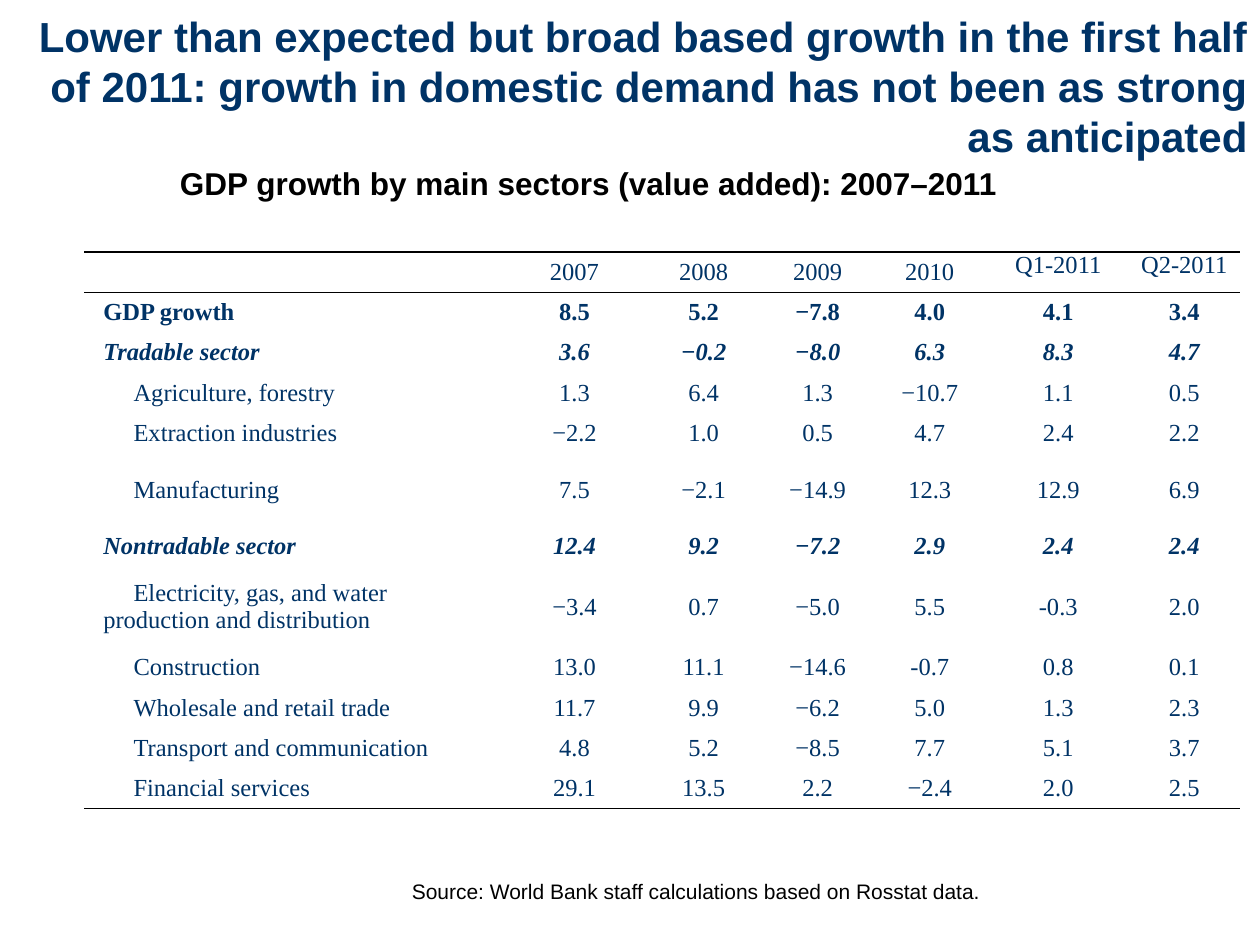
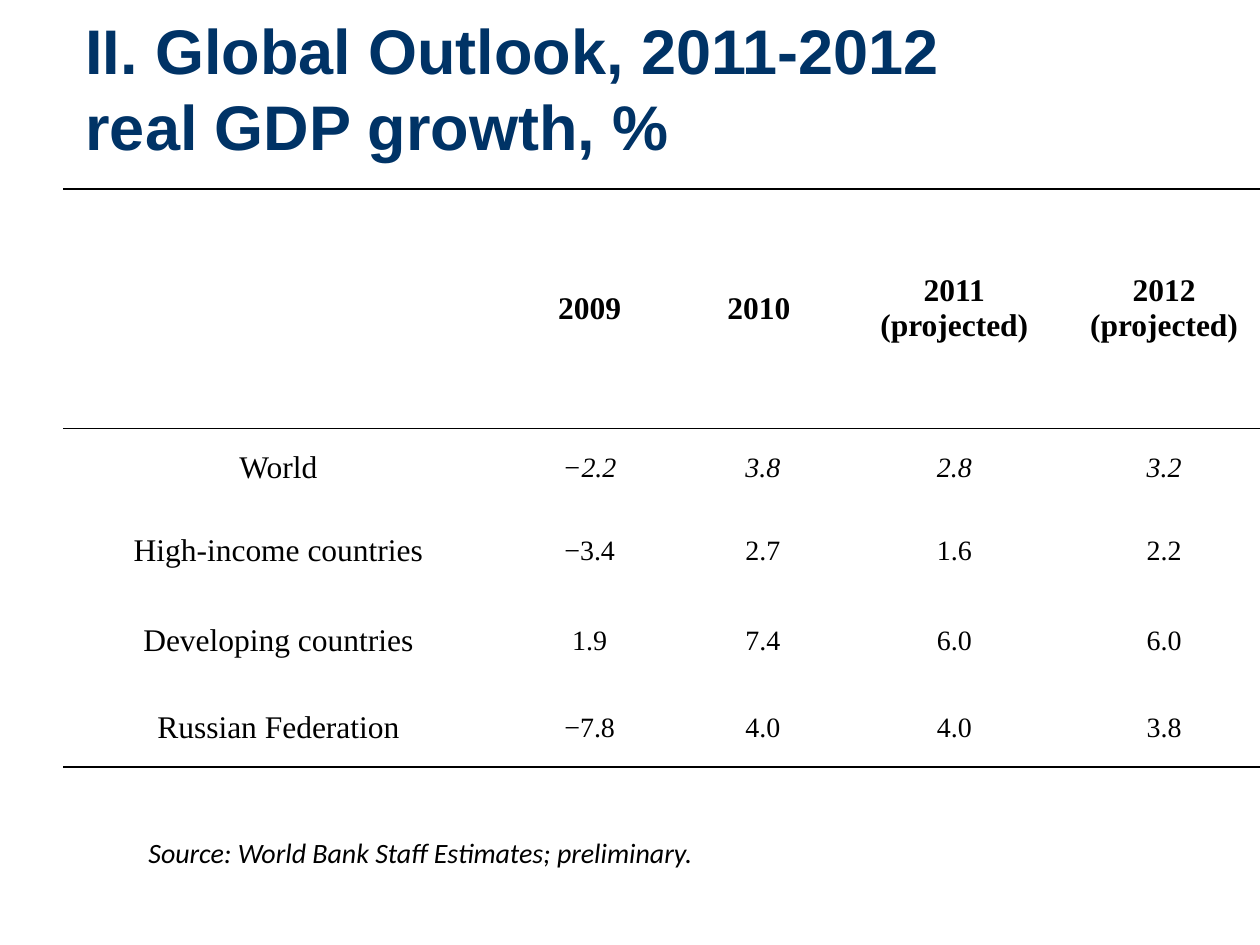
from dataclasses import dataclass

from lxml import etree
from pptx import Presentation
from pptx.dml.color import RGBColor
from pptx.enum.text import MSO_ANCHOR, MSO_AUTO_SIZE, PP_ALIGN
from pptx.oxml.ns import qn
from pptx.util import Inches, Pt

LEFT, CENTER, RIGHT, JUSTIFY = PP_ALIGN.LEFT, PP_ALIGN.CENTER, PP_ALIGN.RIGHT, PP_ALIGN.JUSTIFY
TOP, MIDDLE, BOTTOM = MSO_ANCHOR.TOP, MSO_ANCHOR.MIDDLE, MSO_ANCHOR.BOTTOM
GROW, FIXED = MSO_AUTO_SIZE.SHAPE_TO_FIT_TEXT, MSO_AUTO_SIZE.NONE


@dataclass(frozen=True)
class Theme:
    navy: str = "003366"
    black: str = "000000"
    sans: str = "Arial"
    serif: str = "Times New Roman"
    note: str = "Calibri"
    long_title: int = 24
    title: int = 36
    heading: int = 18
    source: int = 12
    note_size: int = 16
    sector_size: int = 14
    outlook_label: int = 18
    outlook_value: int = 16


THEME = Theme()

SECTOR_YEARS = ["2007", "2008", "2009", "2010", "Q1-2011", "Q2-2011"]
SECTOR_ROWS = [
    ("total", "GDP growth", "8.5 5.2 −7.8 4.0 4.1 3.4"),
    ("sector", "Tradable sector", "3.6 −0.2 −8.0 6.3 8.3 4.7"),
    ("item", "Agriculture, forestry", "1.3 6.4 1.3 −10.7 1.1 0.5"),
    ("item", "Extraction industries", "−2.2 1.0 0.5 4.7 2.4 2.2"),
    ("item", "Manufacturing", "7.5 −2.1 −14.9 12.3 12.9 6.9"),
    ("sector", "Nontradable sector", "12.4 9.2 −7.2 2.9 2.4 2.4"),
    ("item", "Electricity, gas, and water production and distribution",
     "−3.4 0.7 −5.0 5.5 -0.3 2.0"),
    ("item", "Construction", "13.0 11.1 −14.6 -0.7 0.8 0.1"),
    ("item", "Wholesale and retail trade", "11.7 9.9 −6.2 5.0 1.3 2.3"),
    ("item", "Transport and communication", "4.8 5.2 −8.5 7.7 5.1 3.7"),
    ("item", "Financial services", "29.1 13.5 2.2 −2.4 2.0 2.5"),
]
LEVEL_FORMATS = {
    "total": {"bold": True},
    "sector": {"bold": True, "italic": True},
    "item": {},
}
OUTLOOK_YEARS = ["2009", "2010 ", "2011\n(projected)", "2012\n(projected)"]
OUTLOOK_ROWS = [
    ("World", "−2.2 3.8 2.8 3.2"),
    ("High-income countries", "−3.4 2.7 1.6 2.2"),
    ("Developing countries", "1.9 7.4 6.0 6.0"),
    ("Russian Federation", "−7.8 4.0 4.0 3.8"),
]


def apply(target, formats):
    for name, value in formats.items():
        setattr(target, name, value)


def font_format(name, size, **extra):
    return {"name": name, "size": Pt(size), "bold": False, "italic": False, **extra}


def write_para(para, lines, font, color, align=LEFT, margin=0, indent=0):
    para.alignment = align
    properties = para._p.get_or_add_pPr()
    properties.set("marL", str(Inches(margin)))
    properties.set("indent", str(Inches(indent)))
    for number, line in enumerate(lines):
        if number:
            para.add_line_break()
        span = para.add_run()
        span.text = line
        apply(span.font, font)
        span.font.color.rgb = RGBColor.from_string(color)


def add_text(page, place, lines, font, color, anchor=MIDDLE, size_mode=GROW, wrap=True, **layout):
    box = page.shapes.add_textbox(*map(Inches, place))
    frame = box.text_frame
    apply(frame, {"word_wrap": wrap, "auto_size": size_mode, "vertical_anchor": anchor})
    write_para(frame.paragraphs[0], lines, font, color, **layout)


def add_title(page, place, lines, size, align=LEFT):
    add_text(page, place, lines, font_format(THEME.sans, size, bold=True), THEME.navy,
             anchor=BOTTOM, size_mode=FIXED, align=align)


def set_borders(cell, top, bottom):
    properties = cell._tc.get_or_add_tcPr()
    for side, width in {"lnL": 0, "lnR": 0, "lnT": top, "lnB": bottom}.items():
        line = etree.SubElement(properties, qn(f"a:{side}"))
        if width:
            line.set("w", str(Pt(width)))
            fill = etree.SubElement(line, qn("a:solidFill"))
            etree.SubElement(fill, qn("a:srgbClr")).set("val", THEME.black)
        else:
            etree.SubElement(line, qn("a:noFill"))


def add_ruled_table(page, place, widths, heights, outer_rule, header_rule):
    table = page.shapes.add_table(len(heights), len(widths), *map(Inches, place)).table
    apply(table, {"first_row": False, "horz_banding": False})
    for column, width in zip(table.columns, widths):
        column.width = Inches(width)
    rules = [outer_rule, header_rule] + [0] * (len(heights) - 2) + [outer_rule]
    for number, (row, height) in enumerate(zip(table.rows, heights)):
        row.height = Inches(height)
        for cell in row.cells:
            set_borders(cell, rules[number], rules[number + 1])
            cell.fill.background()
            apply(cell, {"margin_left": Inches(0.07), "margin_right": Inches(0.07),
                         "margin_top": 0, "margin_bottom": 0, "vertical_anchor": MIDDLE})
    return table


def write_cell(cell, text, font, color, **layout):
    frame = cell.text_frame
    for number, line in enumerate(text.split("\n")):
        para = frame.add_paragraph() if number else frame.paragraphs[0]
        write_para(para, [line], font, color, **layout)


def write_row(table, row, texts, label_font, value_font, color, label_layout, value_layout):
    for column, text in enumerate(texts):
        font, layout = (value_font, value_layout) if column else (label_font, label_layout)
        write_cell(table.cell(row, column), text, font, color, **layout)


def build_sector_page(page):
    add_title(page, (0, 0.58, 10, 0.75),
              ["Lower than expected but broad based growth in the first half of 2011: "
               "growth in domestic demand has not been as strong as anticipated"],
              THEME.long_title, RIGHT)
    add_text(page, (2.75, 6.92, 5.18, 0.3),
             ["Source: World Bank staff calculations based on Rosstat data."],
             font_format(THEME.sans, THEME.source), THEME.black,
             wrap=False, align=JUSTIFY, indent=0.42)
    add_text(page, (1.33, 1.25, 7.25, 0.4),
             ["GDP growth by main sectors (value added): 2007–2011"],
             font_format(THEME.sans, THEME.heading, bold=True), THEME.black)

    heights = [0.32] * 5 + [0.58, 0.32, 0.64] + [0.32] * 4
    table = add_ruled_table(page, (0.67, 2, 9.17, 4.43),
                            [3.34, 1.02, 1.03, 0.78, 1, 1.04, 0.96], heights, 1, 1)
    centered = {"align": CENTER, "margin": 0.08}
    plain = font_format(THEME.serif, THEME.sector_size)
    write_row(table, 0, ["", *SECTOR_YEARS], plain, plain, THEME.navy, centered, centered)
    for column in (5, 6):
        table.cell(0, column).vertical_anchor = TOP
    for row, (level, label, values) in enumerate(SECTOR_ROWS, 1):
        font = {**plain, **LEVEL_FORMATS[level]}
        label_layout = {"margin": 0.08, "indent": 0.24 if level == "item" else 0}
        write_row(table, row, [label, *values.split()], font, font, THEME.navy,
                  label_layout, centered)


def build_outlook_page(page):
    add_title(page, (0.58, 0.42, 8.92, 0.92),
              ["II. Global Outlook, 2011-2012", "real GDP growth, %"], THEME.title)
    add_text(page, (1.08, 6.58, 7.17, 0.37),
             ["Source: World Bank Staff Estimates; preliminary."],
             font_format(THEME.note, THEME.note_size, italic=True), THEME.black, align=JUSTIFY)

    table = add_ruled_table(page, (0.5, 1.5, 9.5, 4.58), [3.42, 1.52, 1.23, 1.81, 1.52],
                            [1.9, 0.63, 0.69, 0.74, 0.63], 1.5, 1)
    centered = {"align": CENTER}
    label_font = font_format(THEME.serif, THEME.outlook_label)
    header_font = {**label_font, "bold": True}
    write_row(table, 0, ["", *OUTLOOK_YEARS], header_font, header_font, THEME.black,
              centered, centered)
    for row, (label, values) in enumerate(OUTLOOK_ROWS, 1):
        value_font = font_format(THEME.serif, THEME.outlook_value, italic=label == "World")
        write_row(table, row, [label, *values.split()], label_font, value_font, THEME.black,
                  centered, centered)


def main():
    deck = Presentation()
    apply(deck, {"slide_width": Inches(10), "slide_height": Inches(7.5)})
    blank = deck.slide_layouts[6]
    for build in (build_sector_page, build_outlook_page):
        build(deck.slides.add_slide(blank))
    deck.save("out.pptx")


if __name__ == "__main__":
    main()
